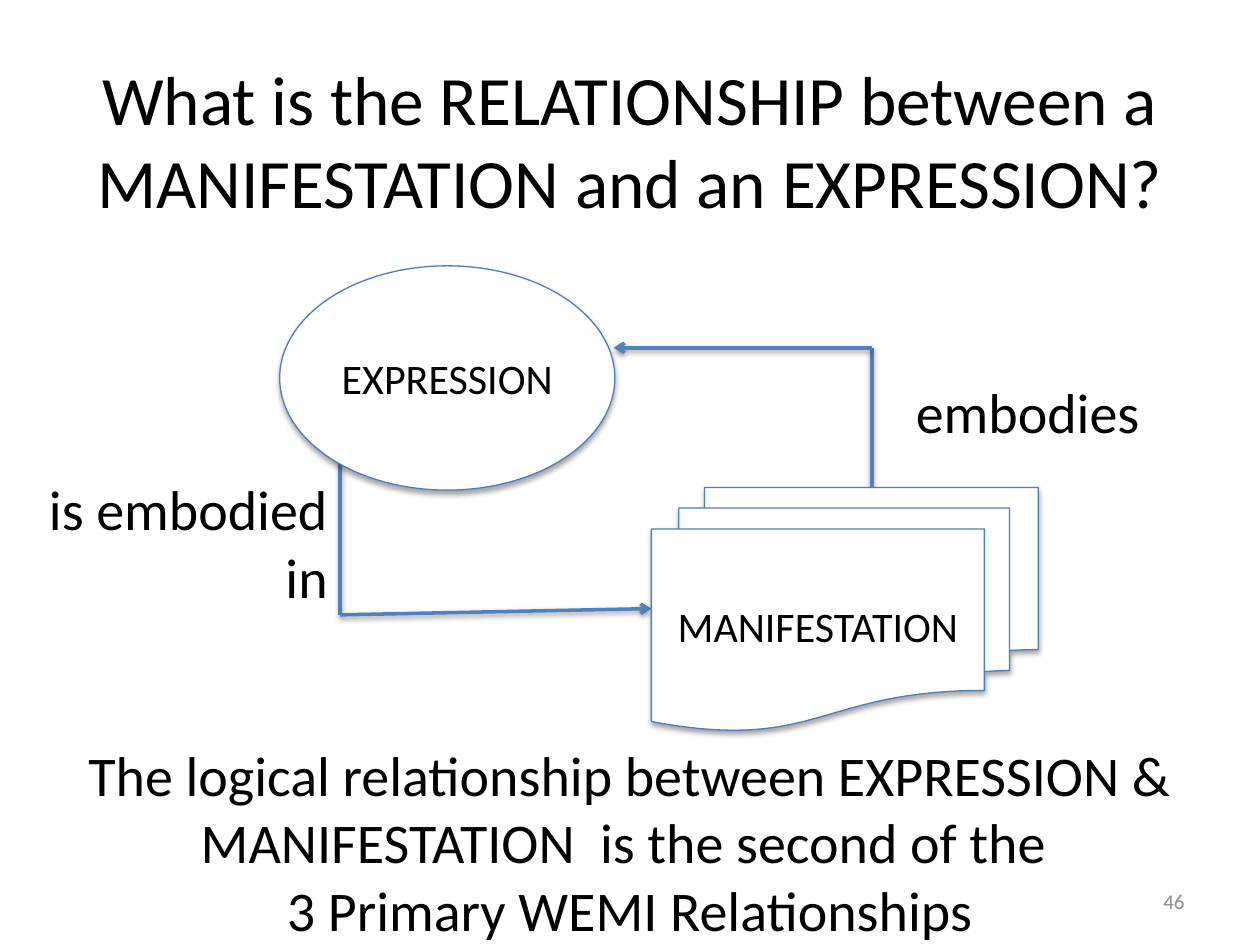
from lxml.etree import SubElement
from pptx import Presentation
from pptx.dml.color import RGBColor
from pptx.enum.shapes import MSO_CONNECTOR as Connector, MSO_SHAPE as Shape
from pptx.enum.text import MSO_ANCHOR as Anchor, PP_ALIGN as Align
from pptx.oxml.ns import qn
from pptx.util import Inches, Pt

COLORS = {"text": "000000", "number": "8C8C8C", "fill": "FFFFFF",
          "outline": "4B7EBC", "arrow": "4F81BD", "shadow": "000000"}
FONT = "Calibri"

TITLE = "What is the RELATIONSHIP between a MANIFESTATION and an EXPRESSION?"
TITLE_AREA = (0.5, 0.3, 9, 1.61)

LABELS = [
    ("46", (7.17, 6.95, 2.33, 0.4), Align.RIGHT, Anchor.MIDDLE, 12, "number"),
    ("is embodied in", (0, 3.72, 2.7, 1.18), Align.RIGHT, Anchor.TOP, 32, "text"),
    ("embodies", (7.17, 2.95, 2.73, 0.64), Align.LEFT, Anchor.TOP, 32, "text"),
    ("The logical relationship between EXPRESSION & MANIFESTATION  is the second of the \n"
     "3 Primary WEMI Relationships",
     (0, 5.83, 10, 1.72), Align.CENTER, Anchor.TOP, 32, "text"),
]
ROUTES = [
    [(2.7, 3.57), (2.7, 4.88), (5.17, 4.83)],
    [(6.92, 3.87), (6.92, 2.76), (4.87, 2.76)],
]
ENTITIES = [
    ("EXPRESSION", Shape.OVAL, (2.22, 2.11, 2.66, 1.78)),
    ("MANIFESTATION", Shape.FLOWCHART_MULTIDOCUMENT, (5.17, 3.87, 3.07, 1.93)),
]


def color(name):
    return RGBColor.from_string(COLORS[name])


def inches(values):
    return [Inches(value) for value in values]


def write(frame, text, size, align=Align.CENTER, anchor=Anchor.MIDDLE, tint="text"):
    frame.text = text
    frame.word_wrap = True
    frame.vertical_anchor = anchor
    for para in frame.paragraphs:
        para.alignment = align
        for span in para.runs:
            span.font.name = FONT
            span.font.size = Pt(size)
            span.font.color.rgb = color(tint)


def add_shadow(item, distance, opacity):
    effects = SubElement(item._element.spPr, qn("a:effectLst"))
    shadow = SubElement(effects, qn("a:outerShdw"), blurRad=str(Pt(3.1)),
                        dist=str(Pt(distance)), dir="5400000", rotWithShape="0")
    tint = SubElement(shadow, qn("a:srgbClr"), val=COLORS["shadow"])
    SubElement(tint, qn("a:alpha"), val=str(opacity * 1000))


def add_route(page, points):
    for start, end in zip(points, points[1:]):
        line = page.shapes.add_connector(Connector.STRAIGHT, *inches(start + end))
        line.line.color.rgb = color("arrow")
        line.line.width = Pt(2)
        if end == points[-1]:
            SubElement(line.line._get_or_add_ln(), qn("a:tailEnd"), type="arrow")
        add_shadow(line, 1.6, 38)


def add_entity(page, name, kind, area):
    shape = page.shapes.add_shape(kind, *inches(area))
    shape.fill.solid()
    shape.fill.fore_color.rgb = color("fill")
    shape.line.color.rgb = color("outline")
    shape.line.width = Pt(0.75)
    add_shadow(shape, 1.8, 35)
    write(shape.text_frame, name, 24)


def main():
    deck = Presentation()
    deck.slide_width, deck.slide_height = Inches(10), Inches(7.5)
    page = deck.slides.add_slide(deck.slide_layouts[5])
    title = page.shapes.title
    title.left, title.top, title.width, title.height = inches(TITLE_AREA)
    write(title.text_frame, TITLE, 39.6)
    for points in ROUTES:
        add_route(page, points)
    for text, area, align, anchor, size, tint in LABELS:
        box = page.shapes.add_textbox(*inches(area))
        write(box.text_frame, text, size, align, anchor, tint)
    for entity in ENTITIES:
        add_entity(page, *entity)
    deck.save("out.pptx")


if __name__ == "__main__":
    main()
